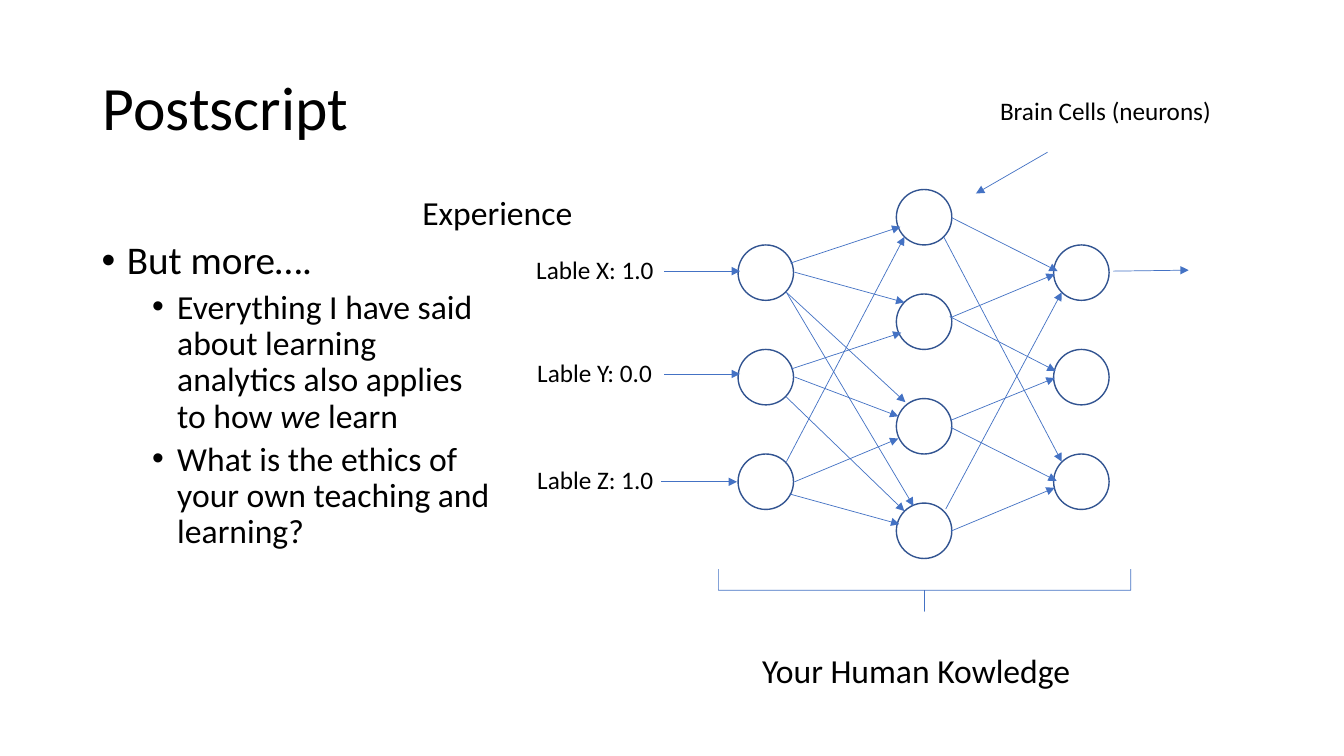
from dataclasses import dataclass
from typing import Any, NamedTuple

from lxml.etree import SubElement as Sub
from pptx import Presentation as Deck
from pptx.dml.color import RGBColor as Rgb
from pptx.enum.shapes import MSO_CONNECTOR as Link, MSO_SHAPE as Kind
from pptx.enum.text import MSO_ANCHOR as Anchor, MSO_AUTO_SIZE as Fit
from pptx.oxml.ns import qn
from pptx.util import Inches, Pt

deck = Deck()
deck.slide_width, deck.slide_height = Inches(13.33), Inches(7.5)
slide = deck.slides.add_slide(deck.slide_layouts[6])
COL = deck.slide_width / 133.3
ROW = deck.slide_height / 75

BLACK, WHITE, NAVY, BLUE = "000000", "FFFFFF", "325491", "4472C4"
SIZE = 5.5
PITCH = 10.37


class Area(NamedTuple):
    col: float
    row: float
    wide: float
    high: float

    def place(self) -> tuple[int, ...]:
        return (round(self.col * COL), round(self.row * ROW),
                round(self.wide * COL), round(self.high * ROW))


class Arrow(NamedTuple):
    col: float
    row: float
    to_col: float
    to_row: float


@dataclass
class Layer:
    col: float
    top: float
    count: int


@dataclass
class Label:
    text: str
    area: Area
    size: int


@dataclass
class Point:
    runs: list[tuple[str, bool]]
    size: int
    left: float
    gap: int


LAYERS = [Layer(73.2, 24.3, 3), Layer(88.9, 18.8, 4), Layer(104.5, 24.3, 3)]

ARROWS = [Arrow(*ends) for ends in (
    (78.4, 26.1, 89.3, 22.5), (78.5, 36.6, 89.4, 33), (78.8, 47.8, 89.1, 43.5),
    (78, 39.4, 89.7, 50.7), (78, 45.8, 89.7, 23.5), (78, 29, 89.8, 39.9),
    (78.8, 27, 89.7, 30), (78.3, 49, 89.2, 52), (78.8, 37.4, 89.1, 41.3),
    (78, 29, 90.6, 50.2),
    (94.4, 21.6, 104.9, 26.9), (94.2, 31.4, 104.7, 36.8), (94.3, 42.4, 104.8, 47.7),
    (94.3, 52.7, 104.6, 48.4), (94.3, 41.7, 104.6, 37.5), (94.3, 31.5, 104.6, 27.2),
    (93.6, 23.5, 105.3, 45.8), (93.8, 50.5, 105.3, 29),
    (65.9, 26.9, 73.4, 26.9), (65.9, 37.1, 73.4, 37.1), (65.6, 47.8, 73.1, 47.8),
    (110.4, 26.9, 117.9, 26.8), (103.9, 15.1, 96.8, 19.2),
)]

LABELS = [
    Label("Experience", Area(40.9, 18.5, 21.7, 5), 24),
    Label("Lable X: 1.0", Area(52.2, 24.7, 14.8, 4), 18),
    Label("Lable Y: 0.0", Area(52.3, 35, 14.8, 4), 18),
    Label("Lable Z: 1.0", Area(52.3, 45.6, 14.8, 4), 18),
    Label("Your Human Kowledge", Area(74.6, 64, 42, 5), 24),
    Label("Brain Cells (neurons)", Area(98.2, 9, 30.2, 4), 18),
]

POINTS = [
    Point([("But more….", False)], 28, 2.5, 10),
    Point([("Everything I have said about learning analytics also applies to how ", False),
           ("we", True), (" learn", False)], 24, 7.5, 5),
    Point([("What is the ethics of your own teaching and learning?", False)], 24, 7.5, 5),
]


def tint(code: str) -> Rgb:
    return Rgb.from_string(code)


def apply(item: Any, form: dict[str, Any]) -> None:
    for name, value in form.items():
        setattr(item, name, value)


def write(para: Any, text: str, size: int, slant: bool = False) -> None:
    run = para.add_run()
    run.text = text
    apply(run.font, {"name": "Calibri", "size": Pt(size), "italic": slant})
    run.font.color.rgb = tint(BLACK)


def frame(area: Area, form: dict[str, Any]) -> Any:
    body = slide.shapes.add_textbox(*area.place()).text_frame
    apply(body, {"word_wrap": True} | form)
    return body


def stroke(line: Any, code: str, width: float) -> None:
    line.color.rgb = tint(code)
    line.width = Pt(width)


def draw_points(area: Area, points: list[Point]) -> None:
    body = frame(area, {"auto_size": Fit.NONE})
    for rank, point in enumerate(points):
        para = body.add_paragraph() if rank else body.paragraphs[0]
        apply(para, {"line_spacing": 0.9, "space_before": Pt(point.gap),
                     "level": min(rank, 1)})
        props = para._p.get_or_add_pPr()
        props.set("marL", str(round(point.left * COL)))
        props.set("indent", str(round(-2.5 * COL)))
        Sub(props, qn("a:buFont"), typeface="Arial")
        Sub(props, qn("a:buChar"), char="•")
        for text, slant in point.runs:
            write(para, text, point.size, slant)


def draw_layer(layer: Layer) -> None:
    for rank in range(layer.count):
        area = Area(layer.col, layer.top + rank * PITCH, SIZE, SIZE)
        cell = slide.shapes.add_shape(Kind.OVAL, *area.place())
        cell.shadow.inherit = False
        cell.fill.solid()
        cell.fill.fore_color.rgb = tint(WHITE)
        stroke(cell.line, NAVY, 1)


def draw_arrow(arrow: Arrow) -> None:
    link = slide.shapes.add_connector(
        Link.STRAIGHT, round(arrow.col * COL), round(arrow.row * ROW),
        round(arrow.to_col * COL), round(arrow.to_row * ROW))
    stroke(link.line, BLUE, 0.5)
    Sub(link.line._get_or_add_ln(), qn("a:tailEnd"), type="triangle")
    Sub(link._element.spPr, qn("a:effectLst"))


def draw_brace(area: Area) -> None:
    brace = slide.shapes.add_shape(Kind.RIGHT_BRACE, *area.place())
    brace.rotation = 90
    brace.adjustments[0], brace.adjustments[1] = 0, 0.5
    brace.shadow.inherit = False
    brace.fill.background()
    stroke(brace.line, BLUE, 0.5)


def draw_label(label: Label) -> None:
    body = frame(label.area, {"auto_size": Fit.SHAPE_TO_FIT_TEXT})
    write(body.paragraphs[0], label.text, label.size)


def main() -> None:
    title = frame(Area(9.2, 3.7, 115, 14.5), {"vertical_anchor": Anchor.MIDDLE})
    title.paragraphs[0].line_spacing = 0.9
    write(title.paragraphs[0], "Postscript", 44)
    draw_points(Area(9.1, 23.4, 40.7, 47.6), POINTS)
    for layer in LAYERS:
        draw_layer(layer)
    for arrow in ARROWS:
        draw_arrow(arrow)
    draw_brace(Area(89.6, 38.1, 4.2, 40.9))
    for label in LABELS:
        draw_label(label)
    deck.save("out.pptx")


if __name__ == "__main__":
    main()
